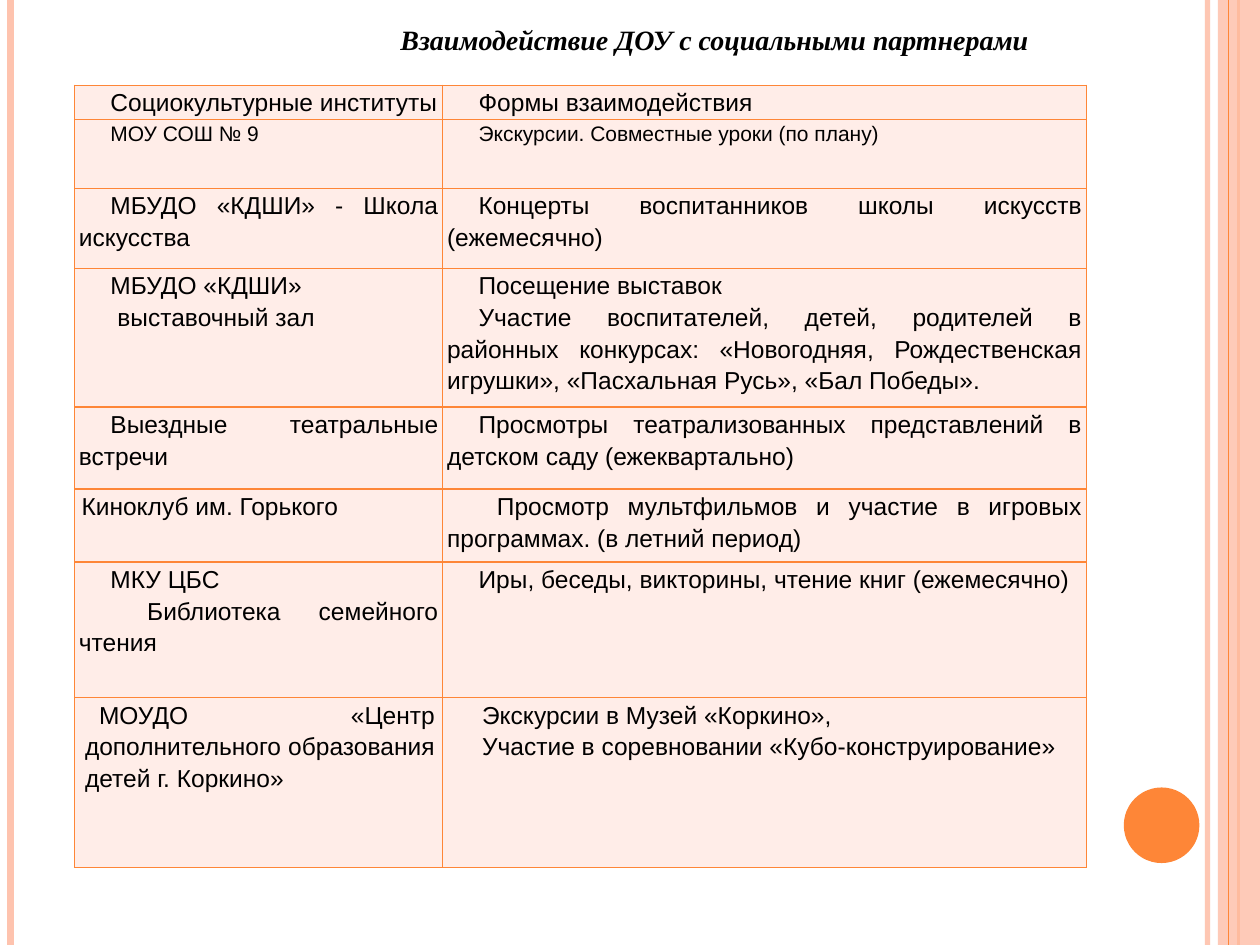
from lxml.etree import SubElement
from pptx import Presentation
from pptx.dml.color import RGBColor
from pptx.enum.shapes import MSO_CONNECTOR, MSO_SHAPE
from pptx.enum.text import MSO_ANCHOR, MSO_AUTO_SIZE, PP_ALIGN
from pptx.oxml.ns import qn
from pptx.util import Pt

ORANGE = RGBColor(0xFE, 0x86, 0x37)
PEACH = RGBColor(0xFE, 0xC3, 0xAE)
CELL_FILL = RGBColor(0xFF, 0xED, 0xE8)
BLACK = RGBColor(0, 0, 0)
SLIDE_HEIGHT = 540
INDENT = 18


def set_opacity(shape, percent):
    color = next(shape._element.spPr.iter(qn("a:srgbClr")))
    SubElement(color, qn("a:alpha"), val=str(percent * 1000))


def add_stripe(shapes, x, color, width):
    stripe = shapes.add_connector(
        MSO_CONNECTOR.STRAIGHT, Pt(x), 0, Pt(x), Pt(SLIDE_HEIGHT))
    stripe.line.color.rgb = color
    stripe.line.width = Pt(width)
    SubElement(stripe._element.spPr, qn("a:effectLst"))
    return stripe


presentation = Presentation()
presentation.slide_width = Pt(720)
presentation.slide_height = Pt(SLIDE_HEIGHT)
slide = presentation.slides.add_slide(presentation.slide_layouts[5])
shapes = slide.shapes

set_opacity(add_stripe(shapes, 690, PEACH, 3), 93)
add_stripe(shapes, 6, PEACH, 4.5)
add_stripe(shapes, 707.8, ORANGE, 1.5)

side_band = shapes.add_shape(
    MSO_SHAPE.RECTANGLE, Pt(696), 0, Pt(24), Pt(SLIDE_HEIGHT))
circle = shapes.add_shape(MSO_SHAPE.OVAL, Pt(642.2), Pt(450), Pt(43.2), Pt(43.2))
for shape, color in ((side_band, PEACH), (circle, ORANGE)):
    shape.shadow.inherit = False
    shape.fill.solid()
    shape.fill.fore_color.rgb = color
    shape.line.fill.background()
set_opacity(side_band, 87)
add_stripe(shapes, 702, ORANGE, 0.75)

title = shapes.title
title.left, title.top, title.width, title.height = Pt(139), Pt(9.4), Pt(538.6), Pt(26.6)
title.text_frame.text = "Взаимодействие ДОУ с социальными партнерами"
title.text_frame.auto_size = MSO_AUTO_SIZE.NONE
title.text_frame.vertical_anchor = MSO_ANCHOR.MIDDLE
title_paragraph = title.text_frame.paragraphs[0]
title_paragraph.alignment = PP_ALIGN.CENTER
title_font = title_paragraph.runs[0].font
title_font.name = "Times New Roman"
title_font.size = Pt(16)
title_font.bold = title_font.italic = True
title_font.color.rgb = BLACK

rows = [
    (19.4, 14, 2.5,
     [("Социокультурные институты", INDENT)],
     [("Формы взаимодействия", INDENT)]),
    (39.4, 12, 2.5,
     [("МОУ СОШ № 9", INDENT)],
     [("Экскурсии. Совместные уроки (по плану)", INDENT)]),
    (45.9, 14, 2.5,
     [("МБУДО «КДШИ» - Школа искусства", INDENT)],
     [("Концерты воспитанников школы искусств (ежемесячно)", INDENT)]),
    (79.2, 14, 2.5,
     [("МБУДО «КДШИ»", INDENT), ("выставочный зал", 22)],
     [("Посещение выставок", INDENT),
      ("Участие воспитателей, детей, родителей в районных конкурсах: "
       "«Новогодняя, Рождественская игрушки», «Пасхальная Русь», "
       "«Бал Победы».", INDENT)]),
    (46.8, 14, 2.5,
     [("Выездные театральные встречи", INDENT)],
     [("Просмотры театрализованных представлений в детском саду "
       "(ежеквартально)", INDENT)]),
    (41.8, 14, 2.5,
     [("Киноклуб им. Горького", 1.5)],
     [("Просмотр мультфильмов и участие в игровых программах. "
       "(в летний период)", 28.5)]),
    (77.4, 14, 2.5,
     [("МКУ ЦБС", INDENT), ("Библиотека семейного чтения", 39)],
     [("Иры, беседы, викторины, чтение книг (ежемесячно)", INDENT)]),
    (97.2, 14, 4.5,
     [("МОУДО «Центр дополнительного образования детей г. Коркино»", 8)],
     [("Экскурсии в Музей «Коркино»,", INDENT),
      ("Участие в соревновании «Кубо-конструирование»", INDENT)]),
]

column_widths = (210.4, 367.8)
frame = shapes.add_table(
    len(rows), len(column_widths), Pt(42.6), Pt(48.8),
    Pt(sum(column_widths)), Pt(sum(row[0] for row in rows)))
table = frame.table
table.first_row = table.horz_banding = False
for column, width in zip(table.columns, column_widths):
    column.width = Pt(width)

for row, (height, size, margin, *cell_texts) in zip(table.rows, rows):
    row.height = Pt(height)
    for cell, lines in zip(row.cells, cell_texts):
        cell.margin_left = cell.margin_right = Pt(margin)
        cell.margin_top = cell.margin_bottom = 0
        cell.vertical_anchor = MSO_ANCHOR.TOP
        properties = cell._tc.get_or_add_tcPr()
        for side in ("lnL", "lnR", "lnT", "lnB"):
            border = SubElement(properties, qn(f"a:{side}"), w=str(Pt(1)))
            border_fill = SubElement(border, qn("a:solidFill"))
            SubElement(border_fill, qn("a:srgbClr"), val=str(ORANGE))
        cell.fill.solid()
        cell.fill.fore_color.rgb = CELL_FILL
        cell.text_frame.text = "\n".join(text for text, indent in lines)
        for paragraph, (text, indent) in zip(cell.text_frame.paragraphs, lines):
            paragraph.alignment = PP_ALIGN.JUSTIFY
            paragraph.line_spacing = 1.15
            paragraph._p.get_or_add_pPr().set("indent", str(Pt(indent)))
            font = paragraph.runs[0].font
            font.name = "Arial"
            font.size = Pt(size)
            font.color.rgb = BLACK

center_name = table.cell(len(rows) - 1, 0).text_frame.paragraphs[0]
center_name._p.get_or_add_pPr().set("marL", str(Pt(1.5)))

presentation.save("out.pptx")
